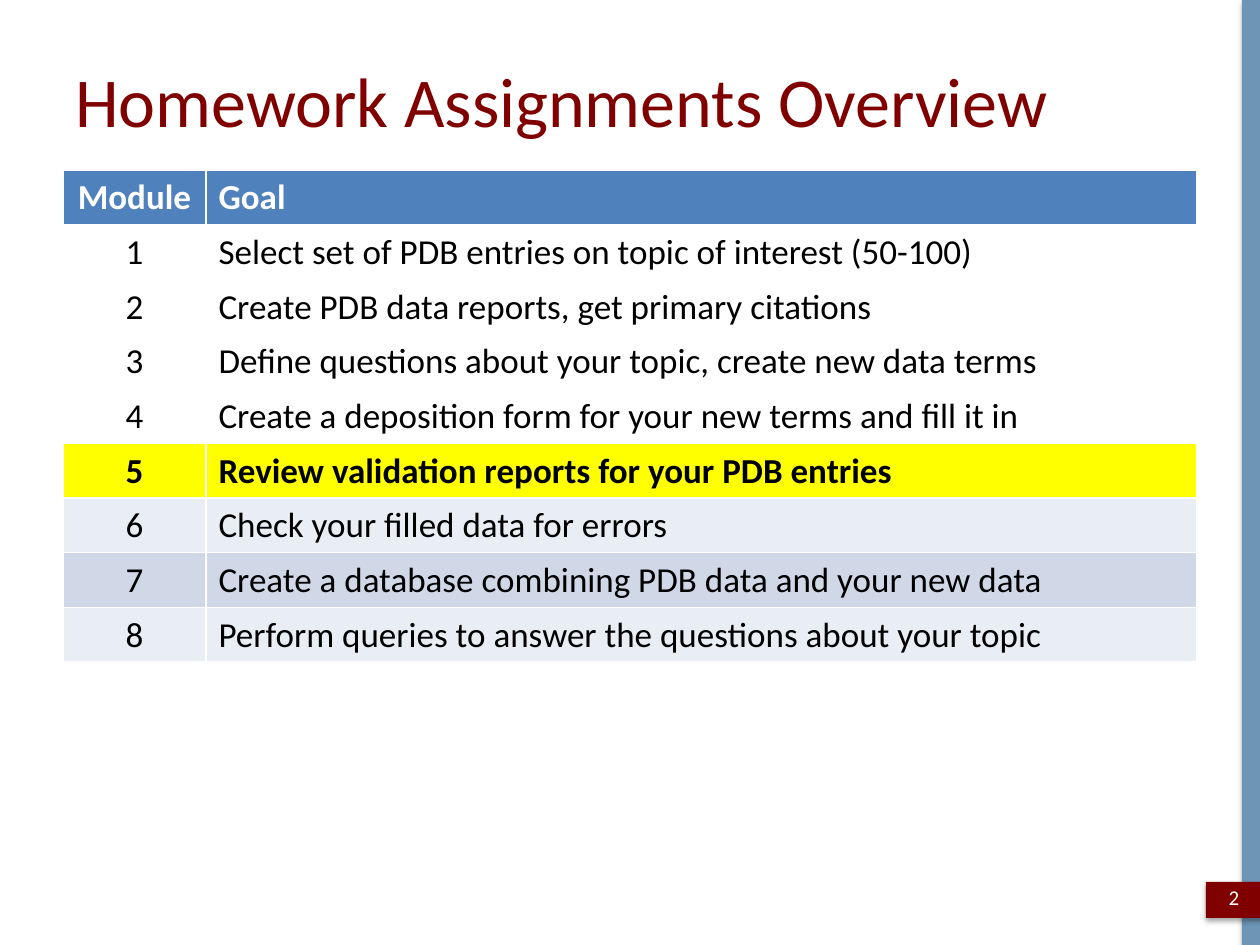
from typing import NamedTuple, Optional

from lxml import etree
from pptx import Presentation
from pptx.dml.color import RGBColor
from pptx.enum.shapes import MSO_SHAPE
from pptx.enum.text import MSO_ANCHOR, PP_ALIGN
from pptx.oxml.ns import qn
from pptx.util import Emu, Pt

RECT = MSO_SHAPE.RECTANGLE
MIDDLE = MSO_ANCHOR.MIDDLE
LEFT, CENTER = PP_ALIGN.LEFT, PP_ALIGN.CENTER

WHITE = RGBColor(0xFF, 0xFF, 0xFF)
BLACK = RGBColor(0x00, 0x00, 0x00)
MAROON = RGBColor(0x80, 0x00, 0x00)
STEEL = RGBColor(0x6C, 0x95, 0xB6)
BLUE = RGBColor(0x4F, 0x81, 0xBD)
YELLOW = RGBColor(0xFF, 0xFF, 0x00)
PALE = RGBColor(0xE9, 0xED, 0xF4)
MID = RGBColor(0xD0, 0xD8, 0xE8)

FONT = "Calibri"
EMU_PER_PX = 914400 / 126
COLUMN_WIDTHS = (143, 991)
ROW_HEIGHT = 52


class Bar(NamedTuple):
    x: int
    y: int
    w: int
    h: int
    fill: RGBColor


class Assignment(NamedTuple):
    module: str
    goal: str
    fill: Optional[RGBColor] = None
    color: RGBColor = BLACK
    bold: bool = False


BARS = (
    Bar(1242, 0, 18, 945, STEEL),
    Bar(1206, 882, 60, 36, MAROON),
)

ASSIGNMENTS = (
    Assignment("Module", "Goal", BLUE, WHITE, True),
    Assignment("1", "Select set of PDB entries on topic of interest (50-100)"),
    Assignment("2", "Create PDB data reports, get primary citations"),
    Assignment("3", "Define questions about your topic, create new data terms"),
    Assignment("4", "Create a deposition form for your new terms and fill it in"),
    Assignment("5", "Review validation reports for your PDB entries", YELLOW, bold=True),
    Assignment("6", "Check your filled data for errors", PALE),
    Assignment("7", "Create a database combining PDB data and your new data", MID),
    Assignment("8", "Perform queries to answer the questions about your topic", PALE),
)


def px(n: int) -> Emu:
    return Emu(round(n * EMU_PER_PX))


def write(tf, text: str, *, size: int, color: RGBColor, bold: bool = False, align=LEFT) -> None:
    p = tf.paragraphs[0]
    p.alignment = align
    r = p.add_run()
    r.text = text
    r.font.name = FONT
    r.font.size = Pt(size)
    r.font.bold = bold
    r.font.color.rgb = color


def add_text(s, x: int, y: int, w: int, h: int, text: str, **fmt) -> None:
    tf = s.shapes.add_textbox(px(x), px(y), px(w), px(h)).text_frame
    tf.word_wrap = True
    tf.vertical_anchor = MIDDLE
    write(tf, text, **fmt)


def add_bar(s, bar: Bar) -> None:
    sp = s.shapes.add_shape(RECT, px(bar.x), px(bar.y), px(bar.w), px(bar.h))
    sp.fill.solid()
    sp.fill.fore_color.rgb = bar.fill
    sp.line.fill.background()
    sp.shadow.inherit = False
    effects = sp._element.spPr.find(qn("a:effectLst"))
    shadow = etree.SubElement(effects, qn("a:outerShdw"), blurRad=str(Pt(3.1)),
                              dist=str(Pt(1.8)), dir="5400000", rotWithShape="0")
    color = etree.SubElement(shadow, qn("a:srgbClr"), val=str(BLACK))
    etree.SubElement(color, qn("a:alpha"), val="35000")


def add_borders(cell) -> None:
    tcPr = cell._tc.get_or_add_tcPr()
    for i, side in enumerate(("lnL", "lnR", "lnT", "lnB")):
        ln = etree.Element(qn(f"a:{side}"), w=str(Pt(1)))
        fill = etree.SubElement(ln, qn("a:solidFill"))
        etree.SubElement(fill, qn("a:srgbClr"), val=str(WHITE))
        tcPr.insert(i, ln)


def add_assignments(s, x: int, y: int) -> None:
    rows = len(ASSIGNMENTS)
    table = s.shapes.add_table(rows, len(COLUMN_WIDTHS), px(x), px(y),
                               px(sum(COLUMN_WIDTHS)), px(rows * ROW_HEIGHT)).table
    for column, width in zip(table.columns, COLUMN_WIDTHS):
        column.width = px(width)
    for row, item in zip(table.rows, ASSIGNMENTS):
        row.height = px(ROW_HEIGHT)
        for cell, text, align in zip(row.cells, (item.module, item.goal), (CENTER, LEFT)):
            if item.fill is None:
                cell.fill.background()
            else:
                cell.fill.solid()
                cell.fill.fore_color.rgb = item.fill
            add_borders(cell)
            write(cell.text_frame, text, size=20, color=item.color, bold=item.bold, align=align)


def main() -> None:
    prs = Presentation()
    prs.slide_width, prs.slide_height = px(1260), px(945)
    s = prs.slides.add_slide(prs.slide_layouts[6])
    for bar in BARS:
        add_bar(s, bar)
    add_text(s, 63, 38, 1134, 123, "Homework Assignments Overview", size=40, color=MAROON)
    add_assignments(s, 63, 170)
    add_text(s, 1206, 872, 56, 50, "2", size=12, color=WHITE, align=CENTER)
    prs.save("out.pptx")


if __name__ == "__main__":
    main()
